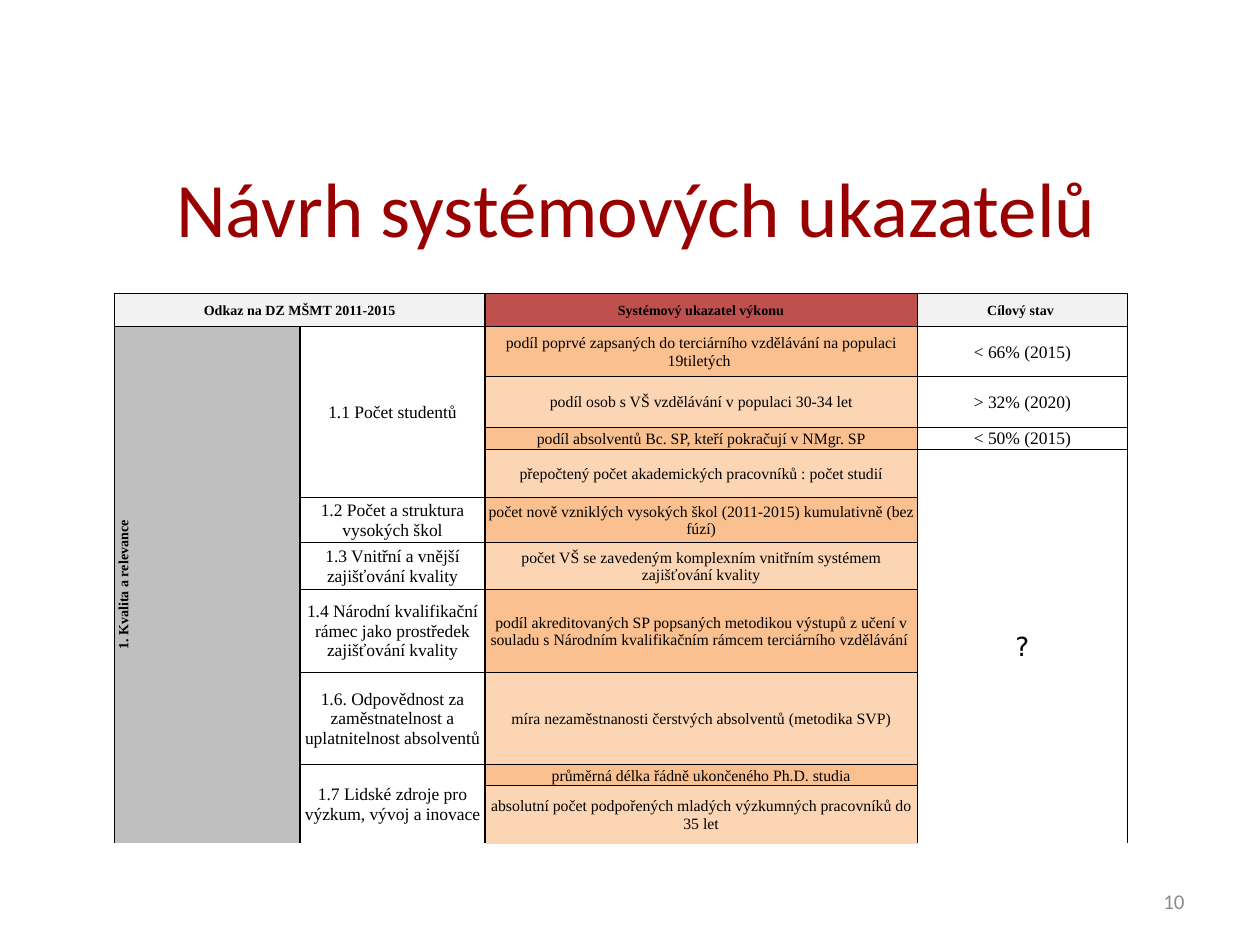
from lxml.etree import SubElement
from pptx import Presentation
from pptx.dml.color import RGBColor
from pptx.enum.text import MSO_ANCHOR, PP_ALIGN
from pptx.oxml.ns import qn
from pptx.util import Inches, Pt

W, H = 10, 7.5
COLORS = {
    "title": "990000", "number": "8C8C8C", "ink": "000000", "header": "F2F2F2",
    "accent": "C0504D", "area": "BFBFBF", "dark": "FAC090", "light": "FCD5B4",
    "white": "FFFFFF",
}


def add_text(tf, text, size, color, font="Calibri", align=PP_ALIGN.CENTER, bold=False):
    p = tf.paragraphs[0]
    p.alignment = align
    f = p.font
    f.name, f.size, f.bold = font, Pt(size), bold
    f.color.rgb = RGBColor.from_string(COLORS[color])
    if text:
        p.add_run().text = text


def add_border(cell, side, width):
    ln = SubElement(cell._tc.get_or_add_tcPr(), qn(f"a:ln{side}"), w=str(Pt(width)))
    if width:
        fill = SubElement(ln, qn("a:solidFill"))
        SubElement(fill, qn("a:srgbClr"), val=COLORS["ink"])
    else:
        SubElement(ln, qn("a:noFill"))


prs = Presentation()
prs.slide_width, prs.slide_height = Inches(W), Inches(H)
s = prs.slides.add_slide(prs.slide_layouts[6])

# Title and slide number, placed as shares of the slide
for text, x, y, w, h, size, color, align in [
    ("Návrh systémových ukazatelů", 0.055, 0.167, 0.9, 0.104, 44, "title", PP_ALIGN.CENTER),
    ("10", 0.717, 0.927, 0.233, 0.053, 12, "number", PP_ALIGN.RIGHT),
]:
    tf = s.shapes.add_textbox(Inches(x * W), Inches(y * H), Inches(w * W), Inches(h * H)).text_frame
    tf.word_wrap = True
    tf.vertical_anchor = MSO_ANCHOR.MIDDLE
    add_text(tf, text, size, color, align=align)

# Table content: area, objective, indicator, target
rows = [
    ("Odkaz na DZ MŠMT 2011-2015", "", "Systémový ukazatel výkonu", "Cílový stav "),
    ("1. Kvalita a relevance", "1.1 Počet studentů",
     "podíl poprvé zapsaných do terciárního vzdělávání na populaci 19tiletých ", "< 66% (2015)"),
    ("", "", "podíl osob s VŠ vzdělávání v populaci 30-34 let", "> 32% (2020)"),
    ("", "", "podíl absolventů Bc. SP, kteří pokračují v NMgr. SP", "< 50% (2015)"),
    ("", "", "přepočtený počet akademických pracovníků : počet studií", "?"),
    ("", "1.2 Počet a struktura vysokých škol",
     "počet nově vzniklých vysokých škol (2011-2015) kumulativně (bez fúzí)", ""),
    ("", "1.3 Vnitřní a vnější zajišťování kvality",
     "počet VŠ se zavedeným komplexním vnitřním systémem zajišťování kvality", ""),
    ("", "1.4 Národní kvalifikační rámec jako prostředek zajišťování kvality",
     "podíl akreditovaných SP popsaných metodikou výstupů z učení v souladu s "
     "Národním kvalifikačním rámcem terciárního vzdělávání ", ""),
    ("", "1.6. Odpovědnost za zaměstnatelnost a uplatnitelnost absolventů",
     "míra nezaměstnanosti čerstvých absolventů (metodika SVP)", ""),
    ("", "1.7 Lidské zdroje pro výzkum, vývoj a inovace",
     "průměrná délka řádně ukončeného Ph.D. studia", ""),
    ("", "", "absolutní počet podpořených mladých výzkumných pracovníků do 35 let", ""),
]
col_widths = [1.47, 1.47, 3.43, 1.67]
row_heights = [0.26, 0.4, 0.4, 0.17, 0.38, 0.36, 0.37, 0.66, 0.73, 0.17, 0.46]
n_rows, n_cols = len(rows), len(col_widths)

frame = s.shapes.add_table(n_rows, n_cols, Inches(0.91), Inches(2.33),
                           Inches(sum(col_widths)), Inches(sum(row_heights)))
table = frame.table
table.first_row = table.horz_banding = False
for col, width in zip(table.columns, col_widths):
    col.width = Inches(width)
for row, height in zip(table.rows, row_heights):
    row.height = Inches(height)

# Merged blocks: first and last cell; owner maps each cell to its block
owner = {(r, c): (r, c) for r in range(n_rows) for c in range(n_cols)}
for (r1, c1), (r2, c2) in [((0, 0), (0, 1)), ((1, 0), (10, 0)), ((1, 1), (4, 1)),
                           ((9, 1), (10, 1)), ((4, 3), (10, 3))]:
    table.cell(r1, c1).merge(table.cell(r2, c2))
    for r in range(r1, r2 + 1):
        for c in range(c1, c2 + 1):
            owner[r, c] = (r1, c1)

for (r, c), block in owner.items():
    cell = table.cell(r, c)
    cell.margin_left = cell.margin_right = cell.margin_top = Inches(0.01)
    cell.margin_bottom = 0
    cell.vertical_anchor = MSO_ANCHOR.MIDDLE

    # Borders: heavy outside and between the left columns, open at the bottom right
    last = r == n_rows - 1
    bottom = (1 if c < 2 else 0) if last else 0.5
    for side, neighbour, width in [
        ("L", (r, c - 1), 0.5 if c == 3 else 1),
        ("R", (r, c + 1), 0.5 if c == 2 else 1),
        ("T", (r - 1, c), 1 if r == 0 else 0.5),
        ("B", (r + 1, c), bottom),
    ]:
        if owner.get(neighbour) != block:
            add_border(cell, side, width)

    # Fill
    if r == 0:
        fill = "accent" if c == 2 else "header"
    else:
        fill = ["area", "white", "dark" if r % 2 else "light", "white"][c]
    cell.fill.solid()
    cell.fill.fore_color.rgb = RGBColor.from_string(COLORS[fill])

    # Text
    text = rows[r][c]
    bold = r == 0 or c == 0
    size = 8 if bold else 9 if c == 2 else 10
    font = "Times New Roman"
    if text == "?":
        size, font = 15, "DejaVu Sans"
    add_text(cell.text_frame, text, size, "ink", font, bold=bold)

table.cell(1, 0)._tc.get_or_add_tcPr().set("vert", "vert270")

prs.save("out.pptx")
